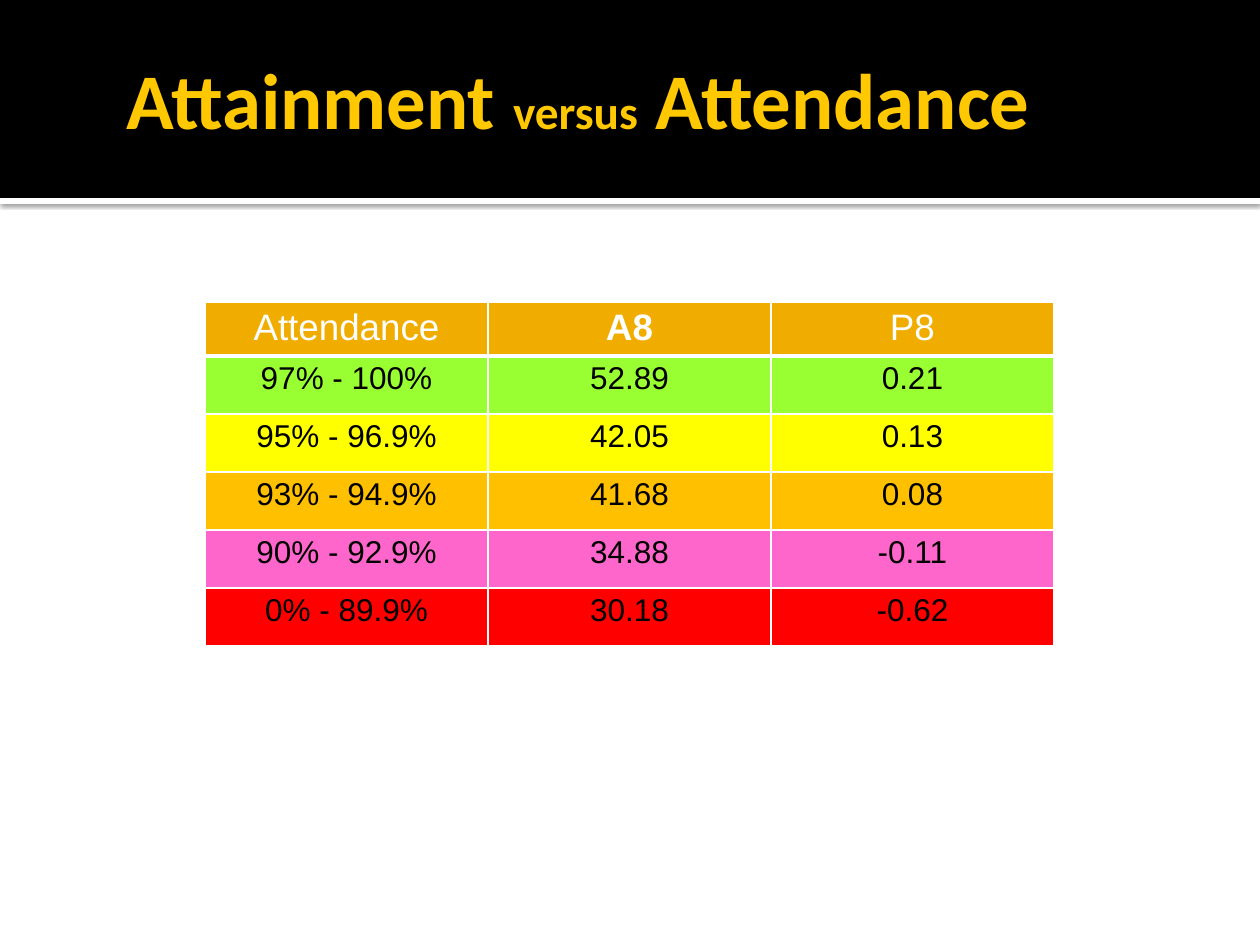
from lxml import etree
from pptx import Presentation
from pptx.dml.color import RGBColor
from pptx.enum.shapes import MSO_SHAPE
from pptx.enum.text import MSO_ANCHOR, PP_ALIGN
from pptx.oxml.ns import qn
from pptx.util import Pt

RECT = MSO_SHAPE.RECTANGLE
MIDDLE = MSO_ANCHOR.MIDDLE
CENTER = PP_ALIGN.CENTER
SCALE = 914400 / 126

COLORS = {
    "white": "FFFFFF",
    "black": "000000",
    "title": "FFC800",
    "head": "F0AD00",
    "green": "99FF33",
    "yellow": "FFFF00",
    "amber": "FFC000",
    "pink": "FF66CC",
    "red": "FF0000",
}

ROWS = [
    ("head", "Attendance", "A8", "P8"),
    ("green", "97% - 100%", "52.89", "0.21"),
    ("yellow", "95% - 96.9%", "42.05", "0.13"),
    ("amber", "93% - 94.9%", "41.68", "0.08"),
    ("pink", "90% - 92.9%", "34.88", "-0.11"),
    ("red", "0% - 89.9%", "30.18", "-0.62"),
]


def px(n):
    return round(n * SCALE)


def paint(fill, color):
    fill.solid()
    fill.fore_color.rgb = RGBColor.from_string(COLORS[color])


def add_run(para, text, size, font, color, bold):
    run = para.add_run()
    run.text = text
    run.font.size = Pt(size)
    run.font.name = font
    run.font.bold = bold
    run.font.color.rgb = RGBColor.from_string(COLORS[color])


def add_band(slide, top, height, color):
    band = slide.shapes.add_shape(RECT, 0, px(top), px(1260), px(height))
    band.shadow.inherit = False
    paint(band.fill, color)
    band.line.fill.background()
    return band


def add_shadow(shape):
    effects = shape._element.spPr.find(qn("a:effectLst"))
    outer = etree.SubElement(
        effects, qn("a:outerShdw"), blurRad=str(Pt(2.5)), dist=str(Pt(0.8)),
        dir="5400000", algn="tl", rotWithShape="0")
    tint = etree.SubElement(outer, qn("a:srgbClr"), val=COLORS["black"])
    etree.SubElement(tint, qn("a:alpha"), val="60000")


def add_title(slide):
    box = slide.shapes.add_textbox(px(117), px(33), px(1130), px(130))
    frame = box.text_frame
    frame.word_wrap = True
    frame.vertical_anchor = MIDDLE
    frame.margin_left = px(9)
    frame.margin_top = frame.margin_right = frame.margin_bottom = px(5)
    para = frame.paragraphs[0]
    for text, size in (("Attainment ", 45), ("versus", 27), (" Attendance", 45)):
        add_run(para, text, size, "Calibri", "title", True)


def add_edge(cell, side, width):
    props = cell._tc.get_or_add_tcPr()
    line = etree.SubElement(props, qn(f"a:ln{side}"), w=str(Pt(width)))
    fill = etree.SubElement(line, qn("a:solidFill"))
    etree.SubElement(fill, qn("a:srgbClr"), val=COLORS["white"])


def fill_cell(cell, text, color, row, col):
    head = row == 0
    widths = {"L": 1, "R": 1, "T": 3 if row == 1 else 1, "B": 3 if head else 1}
    for side, width in widths.items():
        add_edge(cell, side, width)
    paint(cell.fill, color)
    cell.margin_left = cell.margin_right = px(10)
    cell.margin_top = cell.margin_bottom = px(5)
    para = cell.text_frame.paragraphs[0]
    para.alignment = CENTER
    add_run(para, text, 21 if head else 18, "Arial",
            "white" if head else "black", head and col == 1)


def add_grid(slide):
    table = slide.shapes.add_table(
        len(ROWS), 3, px(205), px(302), px(849), px(344)).table
    for col in table.columns:
        col.width = px(283)
    for r, (color, *texts) in enumerate(ROWS):
        table.rows[r].height = px(58 if r else 54)
        for c, text in enumerate(texts):
            fill_cell(table.cell(r, c), text, color, r, c)


def main():
    deck = Presentation()
    deck.slide_width = px(1260)
    deck.slide_height = px(945)
    slide = deck.slides.add_slide(deck.slide_layouts[6])
    add_shadow(add_band(slide, 198, 6, "white"))
    add_band(slide, 0, 198, "black")
    add_title(slide)
    add_grid(slide)
    deck.save("out.pptx")


if __name__ == "__main__":
    main()
